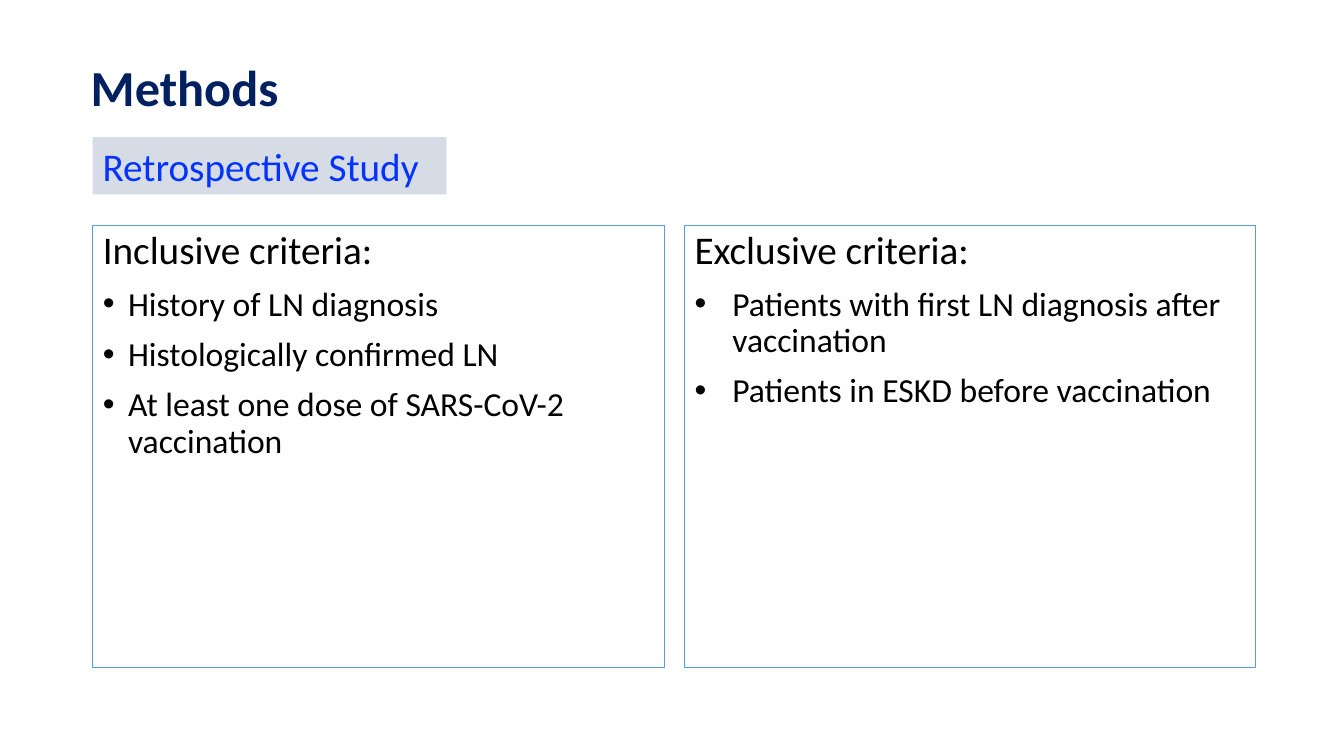
from lxml.etree import SubElement
from pptx import Presentation
from pptx.dml.color import RGBColor
from pptx.enum.text import MSO_ANCHOR as Anchor, MSO_AUTO_SIZE as AutoSize, PP_ALIGN as Align
from pptx.oxml.ns import qn
from pptx.util import Pt

NAVY = RGBColor(0x00, 0x20, 0x60)
BLUE = RGBColor(0x04, 0x32, 0xFF)
BLACK = RGBColor(0x00, 0x00, 0x00)
BORDER = RGBColor(0x5B, 0x9B, 0xD5)
PALE = RGBColor(0xD6, 0xDC, 0xE5)
FONT = "Calibri"


def write(p, text, size=24, color=BLACK, bold=False, spacing=0.9, before=0):
    p.alignment = Align.LEFT
    p.line_spacing = spacing
    p.space_before = Pt(before)
    r = p.add_run()
    r.text = text
    f = r.font
    f.name, f.size, f.bold = FONT, Pt(size), bold
    f.color.rgb = color


def set_bullet(p, indent):
    pPr = p._p.get_or_add_pPr()
    pPr.set("marL", str(Pt(indent)))
    pPr.set("indent", str(-Pt(indent)))
    if indent:
        SubElement(pPr, qn("a:buFont"), typeface="Arial")
        SubElement(pPr, qn("a:buChar"), char="•")
    else:
        SubElement(pPr, qn("a:buNone"))


def place(sp, x, y, w, h):
    sp.left, sp.top, sp.width, sp.height = Pt(x), Pt(y), Pt(w), Pt(h)


def add_title(sp, text, box):
    place(sp, *box)
    tf = sp.text_frame
    tf.auto_size = AutoSize.NONE
    tf.vertical_anchor = Anchor.MIDDLE
    write(tf.paragraphs[0], text, size=36, color=NAVY, bold=True)


def add_tag(s, text, box):
    sp = s.shapes.add_textbox(*map(Pt, box))
    sp.fill.solid()
    sp.fill.fore_color.rgb = PALE
    tf = sp.text_frame
    tf.word_wrap = True
    tf.auto_size = AutoSize.SHAPE_TO_FIT_TEXT
    write(tf.paragraphs[0], text, size=28, color=BLUE, spacing=1.0)


def add_criteria(sp, heading, items, indent, box):
    place(sp, *box)
    sp.line.color.rgb = BORDER
    sp.line.width = Pt(0.75)
    tf = sp.text_frame
    tf.auto_size = AutoSize.NONE
    p = tf.paragraphs[0]
    write(p, heading, size=28, before=10)
    set_bullet(p, 0)
    for item in items:
        p = tf.add_paragraph()
        write(p, item, before=10)
        set_bullet(p, indent)


def build_methods(prs):
    s = prs.slides.add_slide(prs.slide_layouts[3])
    title, *bodies = s.placeholders
    left, top, width, height, gap = 66.24, 161.28, 408.24, 315.36, 14.4
    add_title(title, "Methods", (57.6, 12.24, 828, 104.4))
    columns = [
        ("Inclusive criteria:", 18, ["History of LN diagnosis", "Histologically confirmed LN",
                                     "At least one dose of SARS-CoV-2 vaccination"]),
        ("Exclusive criteria:", 27, ["Patients with first LN diagnosis after vaccination",
                                     "Patients in ESKD before vaccination"]),
    ]
    for i, (sp, (heading, indent, items)) in enumerate(zip(bodies, columns)):
        box = (left + i * (width + gap), top, width, height)
        add_criteria(sp, heading, items, indent, box)
    add_tag(s, "Retrospective Study", (left, 97.92, 252.72, 41.04))


def main():
    prs = Presentation()
    prs.slide_width, prs.slide_height = Pt(960), Pt(540)
    build_methods(prs)
    prs.save("out.pptx")


if __name__ == "__main__":
    main()
